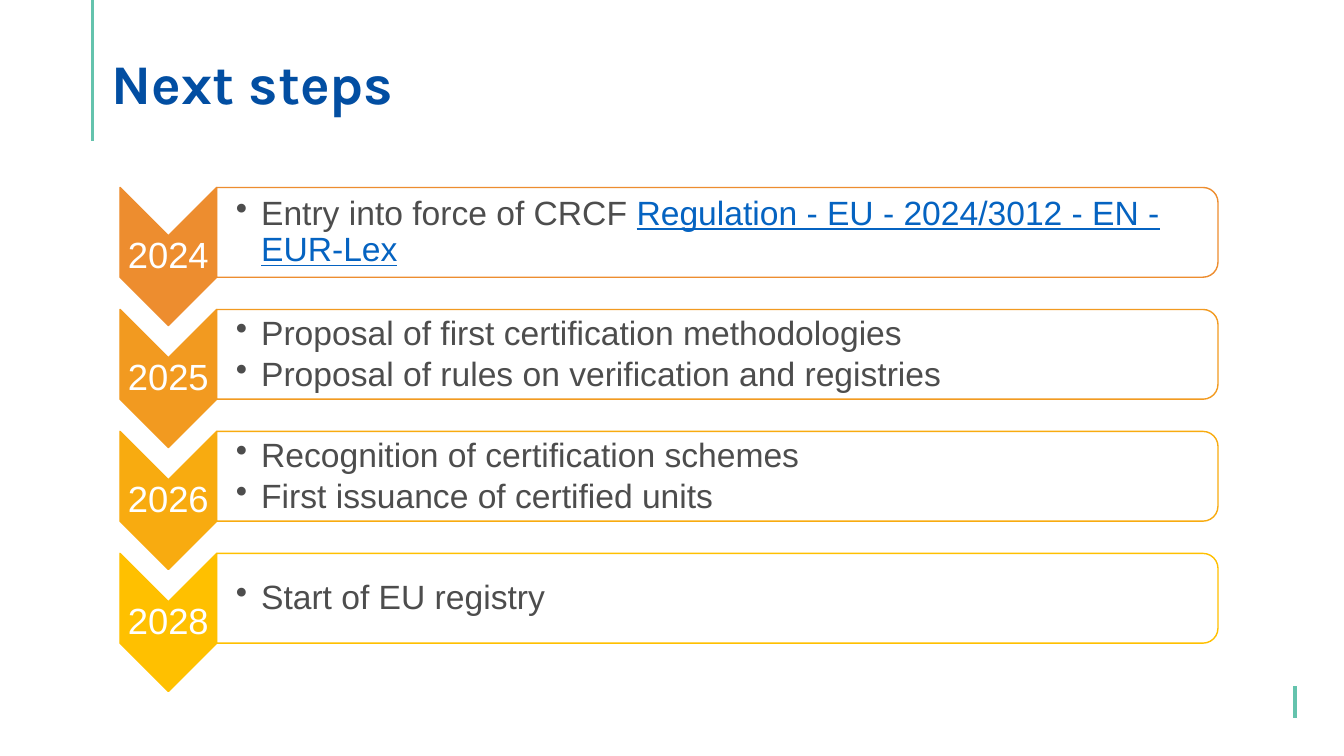
from lxml.etree import SubElement
from pptx import Presentation
from pptx.dml.color import RGBColor
from pptx.enum.shapes import MSO_CONNECTOR as Connector, MSO_SHAPE as Shape
from pptx.enum.text import MSO_ANCHOR as Anchor, PP_ALIGN as Align
from pptx.oxml.ns import qn
from pptx.util import Inches, Pt

COLORS = {
    "white": "FFFFFF", "teal": "64C3AD", "title": "024EA2",
    "body": "4D4D4D", "link": "0563C1",
    "2024": "ED8D2F", "2025": "F29A20", "2026": "F8AB10", "2028": "FFC000",
}
STEPS = [
    ("2024", [[("Entry into force of CRCF ", "body"),
               ("Regulation - EU - 2024/3012 - EN - EUR-Lex", "link")]]),
    ("2025", [[("Proposal of first certification methodologies", "body")],
              [("Proposal of rules on verification and registries", "body")]]),
    ("2026", [[("Recognition of certification schemes", "body")],
              [("First issuance of certified units", "body")]]),
    ("2028", [[("Start of EU registry", "body")]]),
]


def color(name):
    """Return the named colour."""
    return RGBColor.from_string(COLORS[name])


def style_font(font, name, size, tint):
    """Set the typeface, size and colour of a font."""
    font.name, font.size = name, Pt(size)
    font.color.rgb = color(tint)


def add_block(page, kind, left, top, width, height, fill, line, weight=1, turned=False):
    """Draw a shape filling the given box, optionally turned a quarter clockwise."""
    if turned:
        left, top = left + (width - height) / 2, top + (height - width) / 2
        width, height = height, width
    block = page.shapes.add_shape(kind, Inches(left), Inches(top), Inches(width), Inches(height))
    block.rotation = 90 if turned else 0
    block.shadow.inherit = False
    block.fill.solid()
    block.fill.fore_color.rgb = color(fill)
    block.line.color.rgb = color(line)
    block.line.width = Pt(weight)
    return block


def add_frame(page, left, top, width, height, margins, anchor=Anchor.MIDDLE):
    """Add a wrapping text box and return its text frame."""
    box = page.shapes.add_textbox(Inches(left), Inches(top), Inches(width), Inches(height))
    frame = box.text_frame
    frame.word_wrap = True
    frame.vertical_anchor = anchor
    (frame.margin_left, frame.margin_top,
     frame.margin_right, frame.margin_bottom) = map(Inches, margins)
    return frame


def add_bullet(para):
    """Give a paragraph a hanging round bullet."""
    props = para._p.get_or_add_pPr()
    props.set("marL", str(Inches(0.25)))
    props.set("indent", str(-Inches(0.25)))
    SubElement(props, qn("a:buChar"), char="•")


def add_title(page, left, top, width, height):
    """Write the slide title at the bottom of its box."""
    frame = add_frame(page, left, top, width, height, (0.1, 0.05, 0.1, 0), Anchor.BOTTOM)
    para = frame.paragraphs[0]
    para.text = "Next steps"
    para.line_spacing = 0.9
    span = para.runs[0]
    style_font(span.font, "Karla", 40, "title")
    span.font.bold = True


def add_accents(page):
    """Draw the teal rule beside the title and the mark at the lower right."""
    add_block(page, Shape.RECTANGLE, 12.82, 6.8, 0.05, 0.33, "teal", "white", 1.25)
    rule = page.shapes.add_connector(
        Connector.STRAIGHT, Inches(0.92), 0, Inches(0.92), Inches(1.4))
    rule.line.color.rgb = color("teal")
    rule.line.width = Pt(2.25)
    SubElement(rule._element.spPr, qn("a:effectLst"))


def add_step(page, left, top, width, year, items):
    """Draw one year chevron with its panel of bullets."""
    arrow_width, panel_height = 0.96, 0.89
    panel_left, panel_width = left + arrow_width, width - arrow_width
    add_block(page, Shape.CHEVRON, left, top, arrow_width, 1.37, year, year, turned=True)
    label = add_frame(page, left, top + 0.48, arrow_width, 0.41, (0.02,) * 4).paragraphs[0]
    label.text = year
    label.alignment = Align.CENTER
    label.line_spacing, label.space_after = 0.9, Pt(9)
    style_font(label.runs[0].font, "Arial", 26, "white")

    panel = add_block(page, Shape.ROUND_2_SAME_RECTANGLE, panel_left, top,
                      panel_width, panel_height, "white", year, turned=True)
    SubElement(panel.fill._xPr.find(qn("a:solidFill"))[0], qn("a:alpha"), val="90000")
    frame = add_frame(page, panel_left, top + 0.05, panel_width - 0.04, 0.8,
                      (0.19, 0.02, 0.02, 0.02))
    for index, pieces in enumerate(items):
        para = frame.add_paragraph() if index else frame.paragraphs[0]
        add_bullet(para)
        para.line_spacing, para.space_after = 0.9, Pt(3.6)
        style_font(para.font, "Arial", 24, "body")
        for text, tint in pieces:
            span = para.add_run()
            span.text = text
            style_font(span.font, "Arial", 24, tint)
            if tint == "link":
                span.font.underline = True


def add_timeline(page, left, top, width, pitch):
    """Stack the steps at an even pitch."""
    for row, (year, items) in enumerate(STEPS):
        add_step(page, left, top + row * pitch, width, year, items)


def main():
    """Build and save the deck."""
    deck = Presentation()
    deck.slide_width, deck.slide_height = Inches(13.33), Inches(7.5)
    page = deck.slides.add_slide(deck.slide_layouts[6])
    add_accents(page)
    add_timeline(page, 1.19, 1.86, 10.89, 1.21)
    add_title(page, 1.01, 0.12, 12.05, 1.04)
    deck.save("out.pptx")


if __name__ == "__main__":
    main()
